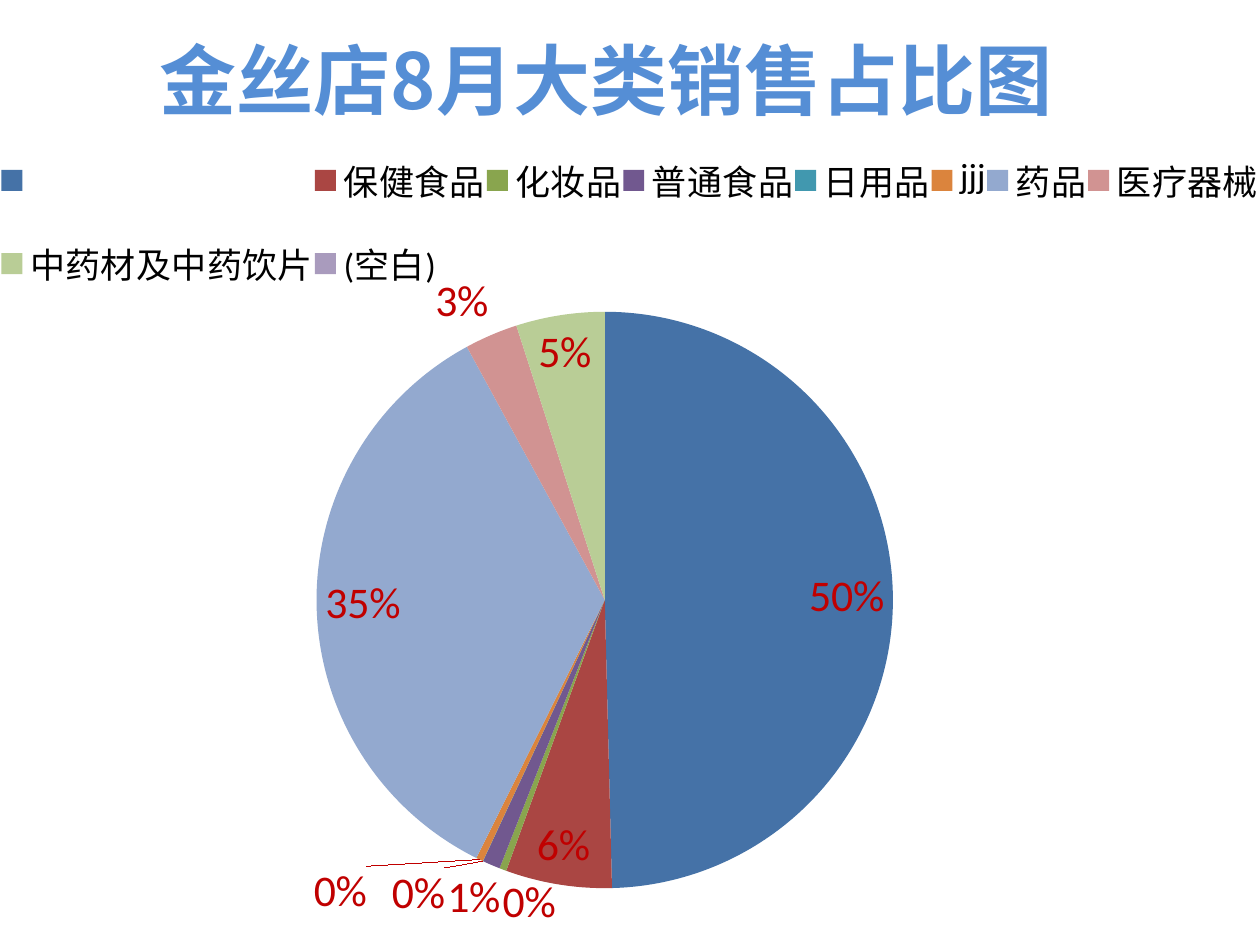
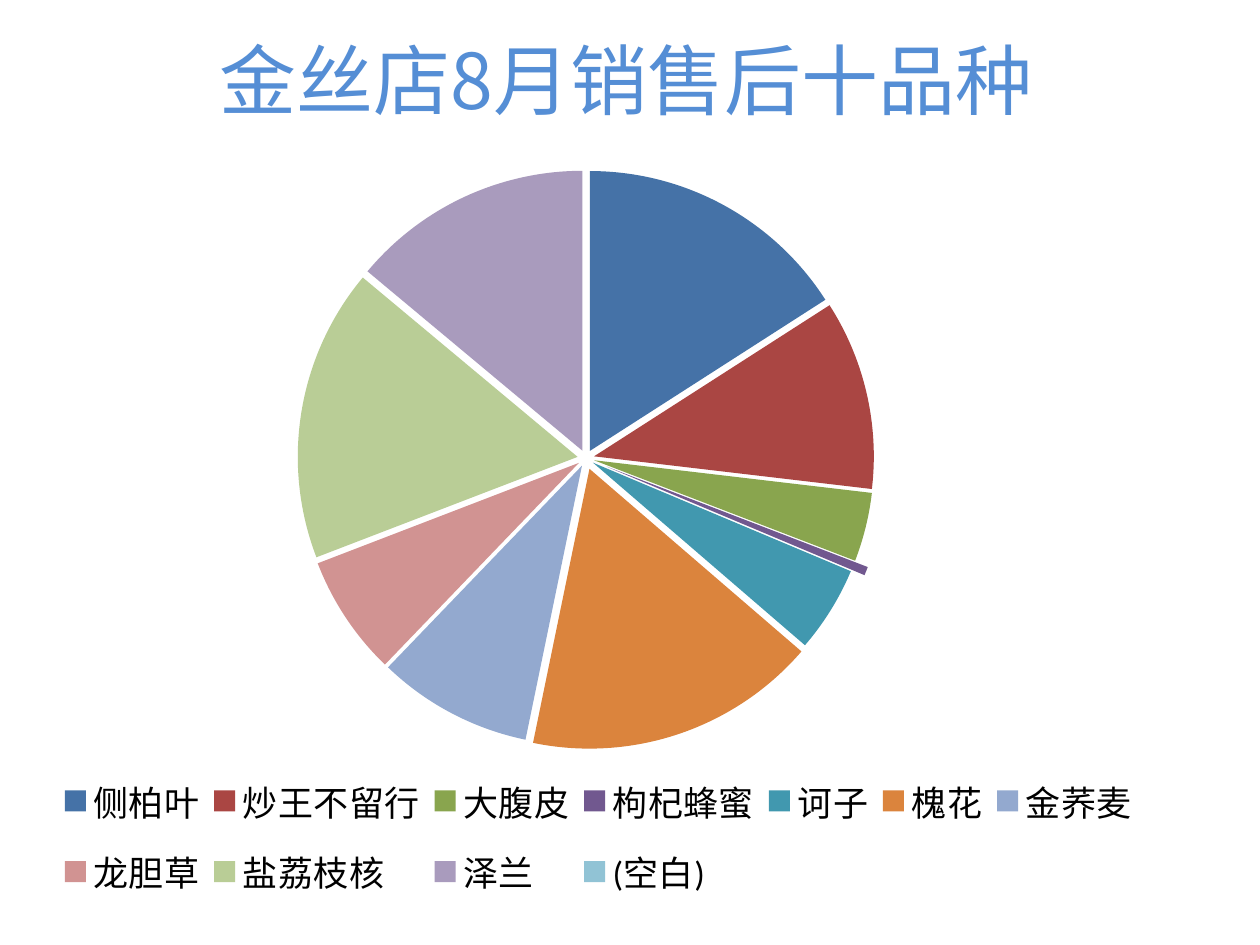
from lxml.etree import SubElement as Sub
from pptx import Presentation
from pptx.chart.data import CategoryChartData as Data
from pptx.dml.color import RGBColor as Rgb
from pptx.enum.chart import XL_CHART_TYPE as Kind, XL_LABEL_POSITION as Spot
from pptx.enum.chart import XL_LEGEND_POSITION as Side
from pptx.enum.text import MSO_ANCHOR as Anchor, PP_ALIGN as Align
from pptx.oxml.ns import qn
from pptx.util import Pt

WIDE, HIGH = 720, 540
BLUE, RED, BLACK = "558ED5", "C00000", "000000"
HUES = ["4572A7", "AA4643", "89A54E", "71588F", "4198AF", "DB843D",
        "93A9CF", "D19392", "B9CD96", "A99BBD", "91C3D5"]
GROUPS = {"": 50, "保健食品": 6, "化妆品": 0.4, "普通食品": 1, "日用品": 0.01,
          "jjj": 0.4, "药品": 35, "医疗器械": 3, "中药材及中药饮片": 5,
          "(空白)": None}
HERBS = {"侧柏叶": 16, "炒王不留行": 11, "大腹皮": 4, "枸杞蜂蜜": 0.5,
         "诃子": 5, "槐花": 17, "金荞麦": 9, "龙胆草": 7, "盐荔枝核": 17,
         "泽兰": 14, "(空白)": None}
BURSTS = {"枸杞蜂蜜": 8, "槐花": 4}


def color(text):
    return Rgb.from_string(text)


def apply(item, form):
    for name, value in form.items():
        setattr(item, name, value)


def place(root, prior, box, inner=False):
    layout = root.find(qn("c:layout"))
    if layout is None:
        layout = Sub(root, qn("c:layout"))
        if prior is None:
            root.insert(0, layout)
        else:
            prior.addnext(layout)
    frame = Sub(layout, qn("c:manualLayout"))
    pairs = [("layoutTarget", "inner")] if inner else []
    pairs += [("xMode", "edge"), ("yMode", "edge")]
    pairs += zip("xywh", box)
    for name, value in pairs:
        Sub(frame, qn("c:" + name)).set("val", str(value))


def burst(root, size, later):
    mark = Sub(root, qn("c:explosion"))
    mark.set("val", str(size))
    root.find(qn(later)).addprevious(mark)


class Deck:
    face = "Noto Sans CJK SC"
    body = "Calibri"

    def __init__(self):
        self.show = Presentation()
        apply(self.show, {"slide_width": Pt(WIDE), "slide_height": Pt(HIGH)})
        self.slide = None

    def add(self):
        self.slide = self.show.slides.add_slide(self.show.slide_layouts[6])

    def font(self, font, size, hue, **form):
        apply(font, {"size": Pt(size), **form})
        font.color.rgb = color(hue)

    def title(self, text, left, bold=False):
        box = self.slide.shapes.add_textbox(Pt(left), 0, Pt(648), Pt(90))
        frame = box.text_frame
        apply(frame, {"word_wrap": True, "vertical_anchor": Anchor.MIDDLE})
        line = frame.paragraphs[0]
        line.alignment = Align.CENTER
        run = line.add_run()
        run.text = text
        self.font(run.font, 44, BLUE, name=self.face, bold=bold)
        Sub(run.font._element, qn("a:ea")).set("typeface", self.face)

    def pie(self, parts, area, key, side, gap=0):
        data = Data()
        data.categories = list(parts)
        data.add_series("Series 1", list(parts.values()))
        chart = self.slide.shapes.add_chart(
            Kind.PIE, 0, 0, Pt(WIDE), Pt(HIGH), data).chart
        apply(chart, {"has_title": False, "has_legend": True})
        self.font(chart.font, 10, BLACK, name=self.body)
        self.legend(chart.legend, key, side)
        place(chart._chartSpace.chart.plotArea, None, area, True)
        plot = chart.plots[0]
        plot.vary_by_categories = True
        row = plot.series[0]
        for num, (name, hue) in enumerate(zip(parts, HUES)):
            self.slice(row.points[num], hue, gap and BURSTS.get(name, gap))
        if gap:
            burst(row._element, gap, "c:dPt")
        return row

    def slice(self, point, hue, gap):
        fill = point.format.fill
        fill.solid()
        fill.fore_color.rgb = color(hue)
        point.format.line.fill.background()
        if gap:
            burst(fill._xPr.getparent(), gap, "c:spPr")

    def legend(self, legend, box, side):
        apply(legend, {"position": side, "include_in_layout": False})
        self.font(legend.font, 20, BLACK, name=self.body)
        root = legend._element
        place(root, root.find(qn("c:legendPos")), box)

    def labels(self, row):
        tags = row.data_labels
        apply(tags, {"show_percentage": True, "show_value": False,
                     "number_format": "0%", "number_format_is_linked": False,
                     "position": Spot.BEST_FIT})
        self.font(tags.font, 25, RED, name=self.body)


def main():
    deck = Deck()
    deck.add()
    row = deck.pie(GROUPS, (0.02, 0.33, 0.92, 0.61), (0, 0.13, 1, 0.21),
                   Side.TOP)
    deck.labels(row)
    deck.title("金丝店8月大类销售占比图", 22.3, True)
    deck.add()
    deck.pie(HERBS, (0.23, 0.18, 0.47, 0.61), (0.04, 0.8, 0.87, 0.17),
             Side.RIGHT, 3)
    deck.title("金丝店8月销售后十品种", 33.8)
    deck.show.save("out.pptx")


if __name__ == "__main__":
    main()
